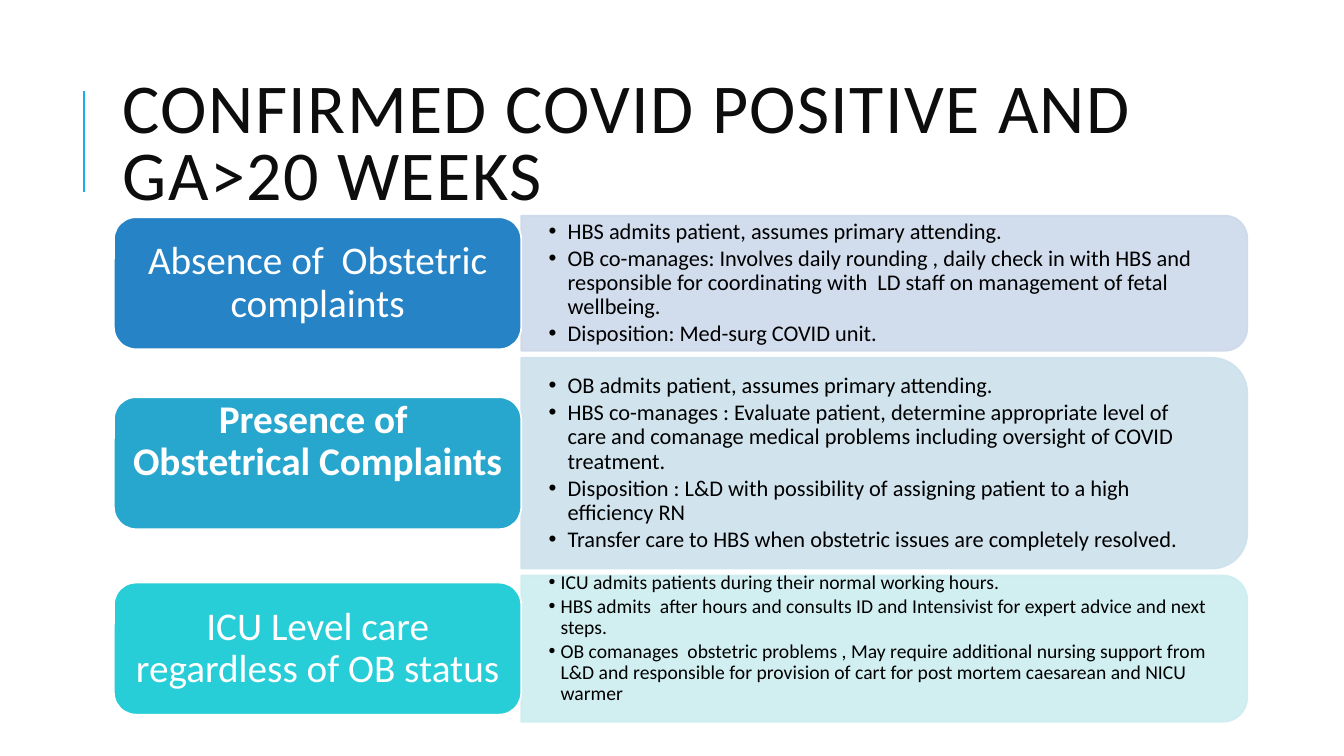
import pptx
import pptx.util
import pptx.dml.color
import pptx.enum.shapes
import pptx.enum.text
import pptx.oxml.ns
import lxml.etree

Inches = pptx.util.Inches
Pt = pptx.util.Pt
SHAPE = pptx.enum.shapes.MSO_SHAPE
ALIGN = pptx.enum.text.PP_ALIGN
qn = pptx.oxml.ns.qn


class Theme:
    font = "Calibri"
    ink, dark, white, accent = "000000", "0D0D0D", "FFFFFF", "1CADE4"
    title, label = 50, 28
    edge, rule = 1.25, 1.5


# Row: label, label colour, bold, label lift, panel colour, height,
# bullet size, hanging indent, text lift, bullets
ROWS = [
    ("Absence of  Obstetric complaints", "2683C6", False, 0, "CDD9EA", 1.34, 16, 0.19, 0, [
        "HBS admits patient, assumes primary attending.",
        "OB co-manages: Involves daily rounding , daily check in with HBS and "
        "responsible for coordinating with  LD staff on management of fetal wellbeing.",
        "Disposition: Med-surg COVID unit."]),
    ("Presence of  Obstetrical Complaints", "27A7CE", True, 0.21, "CDE2ED", 2.09, 16, 0.19, 0, [
        "OB admits patient, assumes primary attending.",
        "HBS co-manages : Evaluate patient, determine appropriate level of care and "
        "comanage medical problems including oversight of COVID treatment.",
        "Disposition : L&D with possibility of assigning patient to a high efficiency RN",
        "Transfer care to HBS when obstetric issues are completely resolved."]),
    ("ICU Level care regardless of OB status", "27CED7", False, 0, "CDEDF0", 1.45, 14, 0.12, 0.1, [
        "ICU admits patients during their normal working hours.",
        "HBS admits  after hours and consults ID and Intensivist for expert advice and next steps.",
        "OB comanages  obstetric problems , May require additional nursing support from L&D "
        "and responsible for provision of cart for post mortem caesarean and NICU warmer"]),
]


def rgb(code):
    return pptx.dml.color.RGBColor.from_string(code)


def write(frame, lines, size, color, font, bold=False, align=ALIGN.LEFT,
          space=0.9, after=0, hang=0, track=0):
    """Fill a text frame, one paragraph for each line."""
    for i, line in enumerate(lines):
        para = frame.paragraphs[0] if i == 0 else frame.add_paragraph()
        para.alignment, para.line_spacing = align, space
        para.space_after = Pt(after)
        run = para.add_run()
        run.text = line
        run.font.name, run.font.size, run.font.bold = font, Pt(size), bold
        run.font.color.rgb = rgb(color)
        if track:
            run.font._element.set("spc", str(track * 100))
        if hang:
            props = para._p.get_or_add_pPr()
            props.set("marL", str(Inches(hang)))
            props.set("indent", str(-Inches(hang)))
            lxml.etree.SubElement(props, qn("a:buFont")).set("typeface", "Arial")
            lxml.etree.SubElement(props, qn("a:buChar")).set("char", "•")


class Painter:
    def __init__(self, slide, theme):
        self.slide, self.theme = slide, theme

    def text(self, left, top, width, height, lines, size, color, pad=0.1, **style):
        box = self.slide.shapes.add_textbox(
            Inches(left), Inches(top), Inches(width), Inches(height))
        frame = box.text_frame
        frame.word_wrap = True
        frame.vertical_anchor = pptx.enum.text.MSO_ANCHOR.MIDDLE
        frame.margin_left = frame.margin_right = Inches(pad)
        frame.margin_top = frame.margin_bottom = 0
        write(frame, lines, size, color, self.theme.font, **style)

    def shape(self, kind, left, top, width, height, fill, edge, turn=0, alpha=100):
        if turn:  # swap the sides about the same centre
            left, top = left + (width - height) / 2, top + (height - width) / 2
            width, height = height, width
        item = self.slide.shapes.add_shape(
            kind, Inches(left), Inches(top), Inches(width), Inches(height))
        item.shadow.inherit = False
        item.rotation = turn
        item.fill.solid()
        item.fill.fore_color.rgb = rgb(fill)
        item.line.color.rgb = rgb(edge)
        item.line.width = Pt(self.theme.edge)
        if alpha < 100:
            for tint in item._element.spPr.iter(qn("a:srgbClr")):
                lxml.etree.SubElement(tint, qn("a:alpha")).set("val", str(alpha * 1000))

    def rule(self, left, top, end):
        line = self.slide.shapes.add_connector(
            pptx.enum.shapes.MSO_CONNECTOR.STRAIGHT,
            Inches(left), Inches(end), Inches(left), Inches(top))
        line.line.color.rgb = rgb(self.theme.accent)
        line.line.width = Pt(self.theme.rule)
        lxml.etree.SubElement(line._element.spPr, qn("a:effectLst"))


def main():
    deck = pptx.Presentation()
    deck.slide_width, deck.slide_height = Inches(13.33), Inches(7.5)
    theme = Theme()
    paint = Painter(deck.slides.add_slide(deck.slide_layouts[6]), theme)

    # Title with its accent rule
    paint.rule(0.83, 0.9, 1.9)
    paint.text(1.12, 0.64, 10.63, 1.64, ["CONFIRMED COVID POSITIVE AND GA>20 WEEKS"],
               theme.title, theme.dark, space=0.8, track=1)

    # Stacked rows: label on the left, bullet panel on the right
    left, split, gap = 1.13, 5.17, 0.07
    wide, tall = split - left, 1.31
    top = 2.14
    for name, hue, bold, rise, tint, height, size, hang, lift, points in ROWS:
        paint.shape(SHAPE.ROUND_2_SAME_RECTANGLE, split, top, 7.2, height,
                    tint, tint, turn=90, alpha=90)
        paint.text(split, top - lift, 7.12, height, points, size, theme.ink,
                   pad=0.27, after=2, hang=hang)
        head = top + (height - tall) / 2
        paint.shape(SHAPE.ROUNDED_RECTANGLE, left, head, wide, tall, hue, theme.white)
        paint.text(left, head - rise, wide, tall, [name], theme.label, theme.white,
                   pad=0.17, bold=bold, align=ALIGN.CENTER)
        top += height + gap

    deck.save("out.pptx")


if __name__ == "__main__":
    main()
